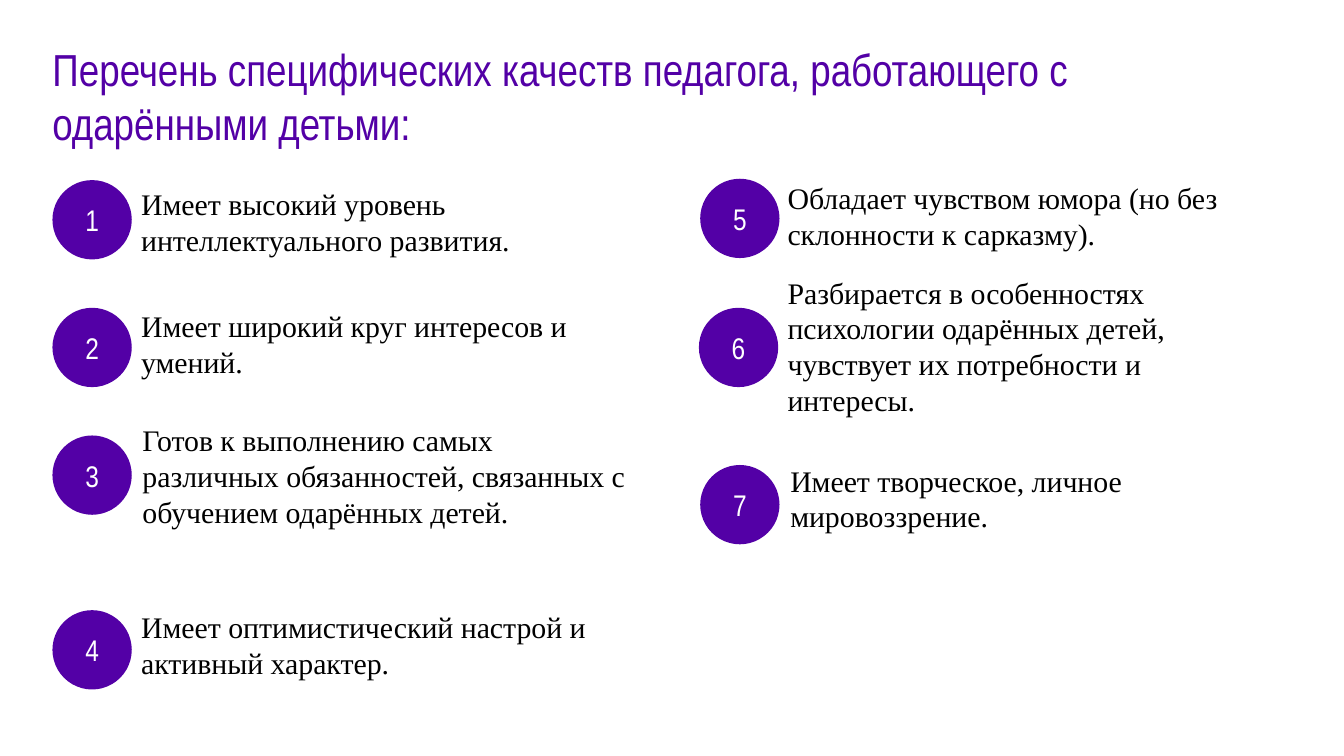
import pptx
import pptx.util
import pptx.dml.color
import pptx.enum.shapes
import pptx.enum.text

Inches = pptx.util.Inches
Align = pptx.enum.text.PP_ALIGN
Anchor = pptx.enum.text.MSO_ANCHOR

PURPLE, BLACK, WHITE = "5300A6", "000000", "FFFFFF"
HEADING_FONT, BODY_FONT = "Arial Narrow", "Times New Roman"
SLIDE_WIDTH = 10
CIRCLE_SIZE = 0.59
TEXT_WIDTH = 3.82
LINE_HEIGHT = 0.27

# Circle left and top, text left and top, text
QUALITIES = [
    (0.39, 1.34, 0.85, 1.38, "Имеет высокий уровень интеллектуального развития."),
    (0.39, 2.29, 0.85, 2.29, "Имеет широкий круг интересов и умений."),
    (0.39, 3.24, 0.86, 3.14, "Готов к выполнению самых различных обязанностей, "
                             "связанных с обучением одарённых детей."),
    (0.39, 4.54, 0.85, 4.53, "Имеет оптимистический настрой и активный характер."),
    (5.21, 1.33, 5.66, 1.34, "Обладает чувством юмора (но без склонности к сарказму)."),
    (5.20, 2.29, 5.66, 2.04, "Разбирается в особенностях психологии одарённых детей, "
                             "чувствует их потребности и интересы."),
    (5.21, 3.46, 5.68, 3.44, "Имеет творческое, личное\nмировоззрение."),
]


def color(value):
    return pptx.dml.color.RGBColor.from_string(value)


def write_text(box, text, *, font, size, fill, align=Align.LEFT,
               anchor=Anchor.TOP, left_margin=0):
    """Fill a shape with text, one paragraph for each line."""
    frame = box.text_frame
    frame.word_wrap = True
    frame.auto_size = pptx.enum.text.MSO_AUTO_SIZE.NONE
    frame.vertical_anchor = anchor
    frame.margin_left = Inches(left_margin)
    frame.margin_top = frame.margin_right = frame.margin_bottom = 0
    frame.text = text
    for para in frame.paragraphs:
        para.alignment = align
        for span in para.runs:
            span.font.name = font
            span.font.size = pptx.util.Pt(size)
            span.font.color.rgb = color(fill)


def add_title(page, text):
    title = page.shapes.title
    title.left, title.top = Inches(0.39), Inches(0.31)
    title.width, title.height = Inches(8.64), Inches(0.81)
    write_text(title, text, font=HEADING_FONT, size=24, fill=PURPLE)


def add_number(group, number, left, top):
    circle = group.shapes.add_shape(
        pptx.enum.shapes.MSO_SHAPE.OVAL, Inches(left), Inches(top),
        Inches(CIRCLE_SIZE), Inches(CIRCLE_SIZE))
    circle.shadow.inherit = False
    circle.fill.solid()
    circle.fill.fore_color.rgb = color(PURPLE)
    circle.line.fill.background()
    write_text(circle, str(number), font=HEADING_FONT, size=16, fill=WHITE,
               align=Align.CENTER, anchor=Anchor.MIDDLE)


def add_quality(page, number, circle_left, circle_top, left, top, text):
    """Group a numbered circle with its description."""
    group = page.shapes.add_group_shape()
    add_number(group, number, circle_left, circle_top)
    lines = 4 if len(text) > 60 else 2
    box = group.shapes.add_textbox(Inches(left), Inches(top),
                                   Inches(TEXT_WIDTH), Inches(lines * LINE_HEIGHT))
    write_text(box, text, font=BODY_FONT, size=16, fill=BLACK, left_margin=0.2)


def main():
    deck = pptx.Presentation()
    # Widescreen, 16:9
    deck.slide_width = Inches(SLIDE_WIDTH)
    deck.slide_height = Inches(SLIDE_WIDTH * 9 / 16)
    page = deck.slides.add_slide(deck.slide_layouts.get_by_name("Title Only"))

    # Heading
    add_title(page, "Перечень специфических качеств педагога, "
                    "работающего с одарёнными детьми:")

    # Numbered qualities in two columns
    for number, quality in enumerate(QUALITIES, start=1):
        add_quality(page, number, *quality)

    deck.save("out.pptx")


if __name__ == "__main__":
    main()
